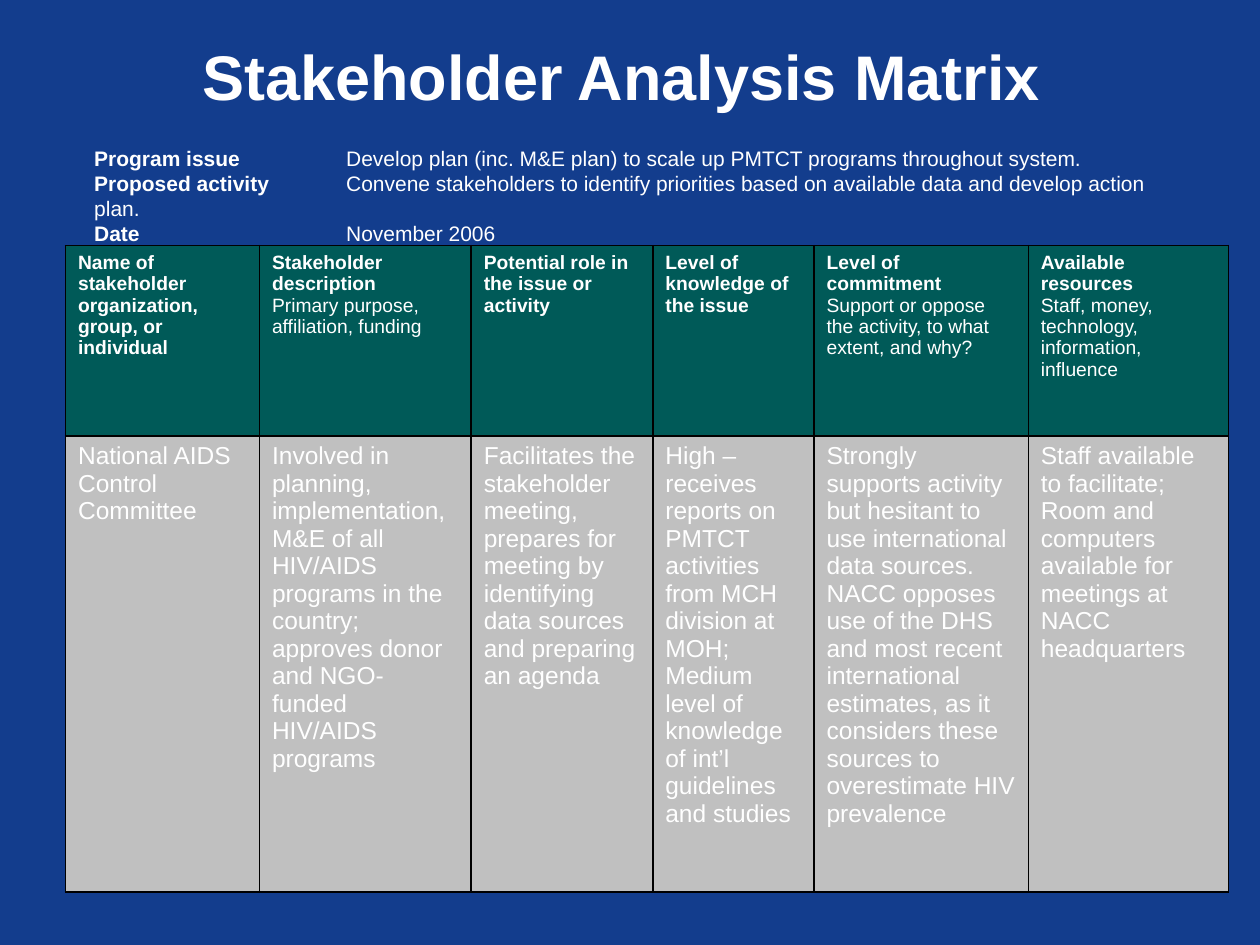
from lxml.etree import SubElement
from pptx import Presentation
from pptx.dml.color import RGBColor
from pptx.enum.text import MSO_ANCHOR as Anchor, MSO_AUTO_SIZE as AutoSize, PP_ALIGN as Align
from pptx.oxml.ns import qn
from pptx.util import Cm, Pt

BLUE, GREEN, GRAY, WHITE, BLACK = "133D8D", "005A58", "C0C0C0", "FFFFFF", "000000"


def style_run(run, size, bold):
    font = run.font
    font.name, font.size, font.bold = "Arial", Pt(size), bold
    font.color.rgb = RGBColor.from_string(WHITE)


def format_cell(cell, fill):
    """Draw thin black borders around the cell and fill it."""
    properties = cell._tc.get_or_add_tcPr()
    for side in ("a:lnL", "a:lnR", "a:lnT", "a:lnB"):
        line = SubElement(properties, qn(side), w=str(Pt(1)))
        solid = SubElement(line, qn("a:solidFill"))
        SubElement(solid, qn("a:srgbClr"), val=BLACK)
    cell.fill.solid()
    cell.fill.fore_color.rgb = RGBColor.from_string(fill)


presentation = Presentation()
presentation.slide_width, presentation.slide_height = Cm(25.4), Cm(19.05)
slide = presentation.slides.add_slide(presentation.slide_layouts[5])
slide.background.fill.solid()
slide.background.fill.fore_color.rgb = RGBColor.from_string(BLUE)

# Title
title = slide.shapes.title
title.left, title.top, title.width, title.height = Cm(2.54), Cm(0.61), Cm(20.32), Cm(1.8)
title.text_frame.text = "Stakeholder Analysis Matrix "
title.text_frame.auto_size = AutoSize.NONE
title.text_frame.vertical_anchor = Anchor.MIDDLE
title_paragraph = title.text_frame.paragraphs[0]
title_paragraph.alignment = Align.CENTER
style_run(title_paragraph.runs[0], 36, True)

# Stakeholder table
columns = [
    (3.91, ["Name of stakeholder organization, group, or individual"],
     "National AIDS Control Committee"),
    (4.27, ["Stakeholder description", "Primary purpose, affiliation, funding"],
     "Involved in planning, implementation, M&E of all HIV/AIDS programs in the country; "
     "approves donor and NGO-funded HIV/AIDS programs"),
    (3.66, ["Potential role in the issue or activity"],
     "Facilitates the stakeholder meeting, prepares for meeting by identifying data sources "
     "and preparing an agenda"),
    (3.25, ["Level of knowledge of the issue"],
     "High – receives reports on PMTCT activities from MCH division at MOH; "
     "Medium level of knowledge of int’l guidelines and studies"),
    (4.32, ["Level of commitment", "Support or oppose the activity, to what extent, and why?"],
     "Strongly supports activity but hesitant to use international data sources. "
     "NACC opposes use of the DHS and most recent international estimates, "
     "as it considers these sources to overestimate HIV prevalence"),
    (4.04, ["Available resources", "Staff, money, technology, information, influence"],
     "Staff available to facilitate; Room and computers available for meetings "
     "at NACC headquarters"),
]
table = slide.shapes.add_table(2, len(columns), Cm(1.32), Cm(4.95), Cm(23.45), Cm(13.03)).table
table.horz_banding = False
table.rows[0].height, table.rows[1].height = Cm(3.84), Cm(9.19)
for index, (width, heading, finding) in enumerate(columns):
    table.columns[index].width = Cm(width)
    heading_cell, finding_cell = table.cell(0, index), table.cell(1, index)
    heading_cell.text_frame.text = "\n".join(heading)
    for number, paragraph in enumerate(heading_cell.text_frame.paragraphs):
        style_run(paragraph.runs[0], 11, number == 0)
    format_cell(heading_cell, GREEN)
    finding_cell.text_frame.text = finding
    style_run(finding_cell.text_frame.paragraphs[0].runs[0], 14, False)
    format_cell(finding_cell, GRAY)

# Program details, with the values lined up at a tab stop
details = [
    ("Program issue", "Develop plan (inc. M&E plan) to scale up PMTCT programs throughout system."),
    ("Proposed activity", "Convene stakeholders to identify priorities based on available data "
                          "and develop action plan."),
    ("Date", "November 2006"),
]
details_box = slide.shapes.add_textbox(Cm(1.9), Cm(3.18), Cm(22.17), Cm(1.78))
frame = details_box.text_frame
frame.word_wrap = True
frame.vertical_anchor = Anchor.MIDDLE
frame.margin_left = frame.margin_top = frame.margin_right = 0
frame.margin_bottom = Cm(0.25)
frame.text = "\n".join(label for label, value in details)
for paragraph, (label, value) in zip(frame.paragraphs, details):
    tab_stops = SubElement(paragraph._p.get_or_add_pPr(), qn("a:tabLst"))
    SubElement(tab_stops, qn("a:tab"), pos=str(Cm(5.08)), algn="l")
    style_run(paragraph.runs[0], 12, True)
    value_run = paragraph.add_run()
    value_run.text = "\t" + value
    style_run(value_run, 12, False)

presentation.save("out.pptx")
